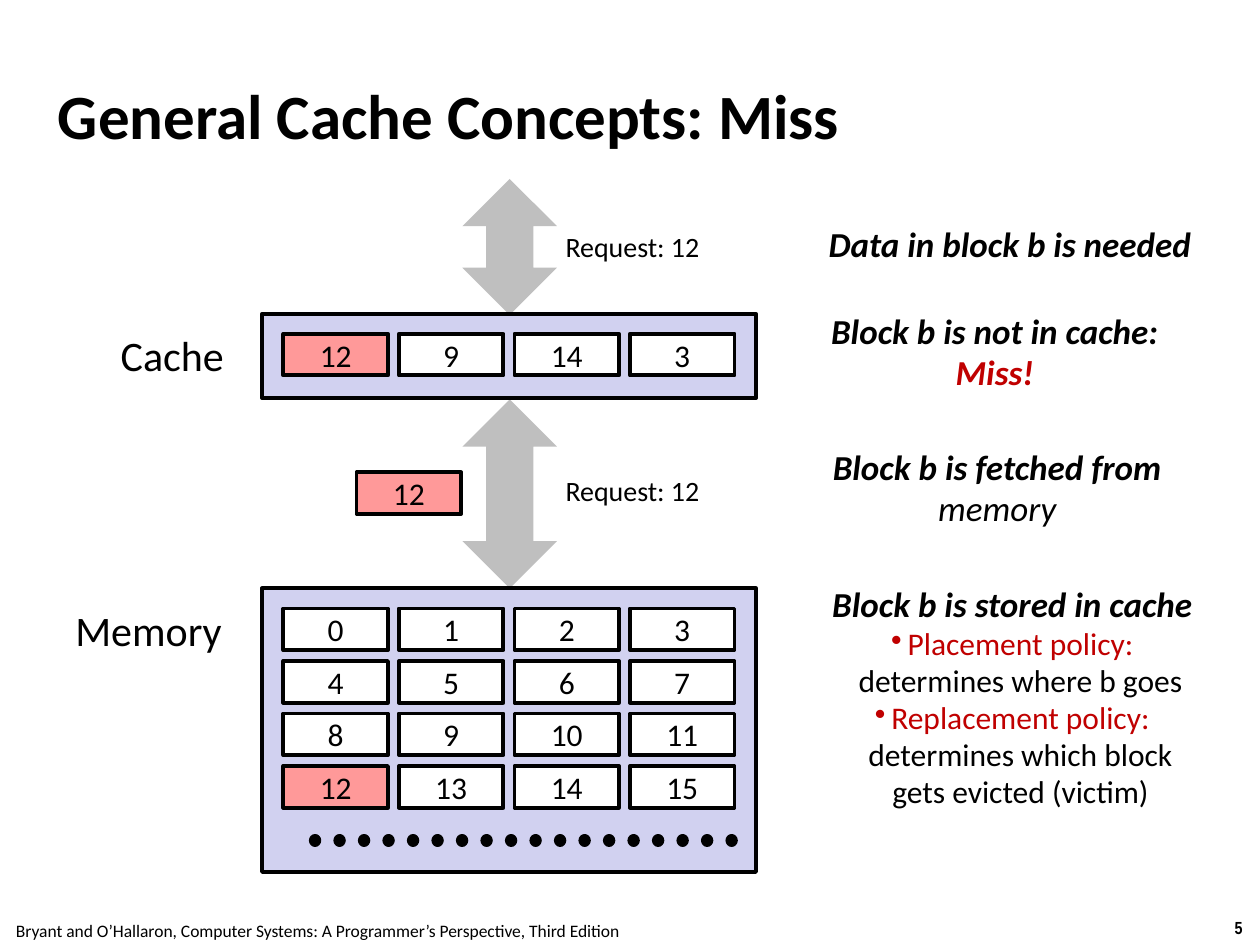
from lxml import etree
from pptx import Presentation
from pptx.dml.color import RGBColor
from pptx.enum.dml import MSO_LINE
from pptx.enum.shapes import MSO_CONNECTOR, MSO_SHAPE
from pptx.enum.text import MSO_ANCHOR, PP_ALIGN
from pptx.oxml.ns import qn
from pptx.util import Inches, Pt

RECTANGLE, ARROW = MSO_SHAPE.RECTANGLE, MSO_SHAPE.UP_DOWN_ARROW
STRAIGHT, DOTTED = MSO_CONNECTOR.STRAIGHT, MSO_LINE.ROUND_DOT
MIDDLE, TOP = MSO_ANCHOR.MIDDLE, MSO_ANCHOR.TOP
LEFT, CENTER = PP_ALIGN.LEFT, PP_ALIGN.CENTER

COLORS = {"ink": "000000", "panel": "D1D1F0", "block": "FFFFFF",
          "hit": "FF9999", "arrow": "BFBFBF", "accent": "C00000"}
COLUMN_LEFT, COLUMN_STEP = 2.25, 2.75 / 3
ROW_TOP, ROW_STEP = 4.83, 1.25 / 3
CACHE_TOP = 2.65


def color(name):
    return RGBColor.from_string(COLORS[name])


class SlideBuilder:
    """Holds the style and the current slide."""
    font = "Calibri"
    outline = Pt(2.25)

    def __init__(self, page):
        self.page = page

    def style(self, font, size, ink="ink", bold=False, italic=False, name=None):
        font.name, font.size = name or self.font, Pt(size)
        font.bold, font.italic = bold, italic
        font.color.rgb = color(ink)

    def shape(self, kind, left, top, width, height, fill, outlined=True):
        item = self.page.shapes.add_shape(
            kind, Inches(left), Inches(top), Inches(width), Inches(height))
        item.shadow.inherit = False
        item.fill.solid()
        item.fill.fore_color.rgb = color(fill)
        if outlined:
            item.line.color.rgb = color("ink")
            item.line.width = self.outline
        else:
            item.line.fill.background()
        return item

    def block(self, left, top, number):
        fill = "hit" if number == 12 else "block"
        box = self.shape(RECTANGLE, left, top, 0.83, 0.33, fill)
        box.text_frame.vertical_anchor = MIDDLE
        para = box.text_frame.paragraphs[0]
        para.text, para.alignment = str(number), CENTER
        self.style(para.font, 18)

    def frame(self, left, top, width, height, anchor=TOP, wrap=False):
        box = self.page.shapes.add_textbox(
            Inches(left), Inches(top), Inches(width), Inches(height))
        box.text_frame.word_wrap = wrap
        box.text_frame.vertical_anchor = anchor
        return box.text_frame

    def label(self, left, top, width, height, text, size, align=CENTER, **look):
        para = self.frame(left, top, width, height).paragraphs[0]
        para.text, para.alignment = text, align
        self.style(para.font, size, **look)

    def title(self, text):
        frame = self.frame(0.42, 0.28, 9.17, 1.25, MIDDLE, wrap=True)
        frame.margin_left = frame.margin_right = Inches(0.04)
        frame.margin_top = frame.margin_bottom = Inches(0.04)
        frame.text = text
        self.style(frame.paragraphs[0].font, 36, bold=True)

    def note(self, left, top, width, height, lines):
        """Centred note; each line is (text, look)."""
        frame = self.frame(left, top, width, height, MIDDLE)
        for index, (text, look) in enumerate(lines):
            para = frame.paragraphs[0] if index == 0 else frame.add_paragraph()
            para.text = text
            para.alignment, para.line_spacing = CENTER, 0.98
            self.style(para.font, 20, **{"italic": True, **look})
        return frame

    def bullet(self, frame, term, lines):
        """Red term, then its explanation on lines of its own."""
        para = frame.add_paragraph()
        para.alignment, para.line_spacing = CENTER, 0.98
        self.style(para.font, 18)
        properties = para._p.get_or_add_pPr()
        properties.set("marL", str(Inches(0.13)))
        properties.set("indent", str(-Inches(0.13)))
        mark = etree.Element(qn("a:buChar"), char="•")
        properties.find(qn("a:defRPr")).addprevious(mark)
        span = para.add_run()
        span.text = term
        span.font.color.rgb = color("accent")
        for line in lines:
            para.add_line_break()
            para.add_run().text = line

    def dotted_line(self, left, right, y):
        line = self.page.shapes.add_connector(
            STRAIGHT, Inches(left), Inches(y), Inches(right), Inches(y))
        line.line.color.rgb = color("ink")
        line.line.width, line.line.dash_style = Pt(7), DOTTED
        line.line._get_or_add_ln().set("cap", "rnd")
        etree.SubElement(line._element.spPr, qn("a:effectLst"))


def main():
    deck = Presentation()
    deck.slide_width, deck.slide_height = Inches(10), Inches(7.5)
    slide = SlideBuilder(deck.slides.add_slide(deck.slide_layouts[6]))

    # Footer and title
    slide.label(9.66, 7.23, 0.34, 0.27, "5", 10, bold=True, name="Arial Narrow")
    slide.label(-0.02, 7.25, 5.08, 0.27,
                "Bryant and O’Hallaron, Computer Systems: "
                "A Programmer’s Perspective, Third Edition", 10)
    slide.title("General Cache Concepts: Miss")

    # Transfer arrows with their requests
    for top, height, label_top in ((1.42, 1.08, 1.77), (3.17, 1.5, 3.71)):
        slide.shape(ARROW, 3.67, top, 0.75, height, "arrow", outlined=False)
        slide.label(4.37, label_top, 1.3, 0.37, "Request: 12", 16)

    # Memory and cache panels
    slide.shape(RECTANGLE, 2.08, 4.67, 3.92, 2.25, "panel")
    slide.shape(RECTANGLE, 2.08, 2.49, 3.92, 0.67, "panel")
    slide.label(0.86, 2.57, 1.04, 0.5, "Cache", 24, LEFT)
    slide.label(0.5, 4.75, 1.4, 0.5, "Memory", 24, LEFT)

    # Blocks in memory, in the cache and on the way
    for number in range(16):
        row, column = divmod(number, 4)
        slide.block(COLUMN_LEFT + column * COLUMN_STEP,
                    ROW_TOP + row * ROW_STEP, number)
    for column, number in enumerate((12, 9, 14, 3)):
        slide.block(COLUMN_LEFT + column * COLUMN_STEP, CACHE_TOP, number)
    slide.block(2.83, 3.75, 12)
    slide.dotted_line(2.5, 5.83, 6.67)

    # Explanations
    strong = {"bold": True}
    slide.note(6.47, 1.73, 3.09, 0.43, [("Data in block b is needed", strong)])
    slide.note(6.49, 2.42, 2.81, 0.76,
               [("Block b is not in cache:", strong),
                ("Miss!", {"bold": True, "ink": "accent"})])
    slide.note(6.5, 3.5, 2.83, 0.76,
               [("Block b is fetched from", strong), ("memory", {})])
    policies = slide.note(6.5, 4.58, 3.07, 1.92,
                          [("Block b is stored in cache", strong)])
    slide.bullet(policies, "Placement policy:", ["determines where b goes"])
    slide.bullet(policies, "Replacement policy:",
                 ["determines which block", "gets evicted (victim)"])

    deck.save("out.pptx")


if __name__ == "__main__":
    main()
